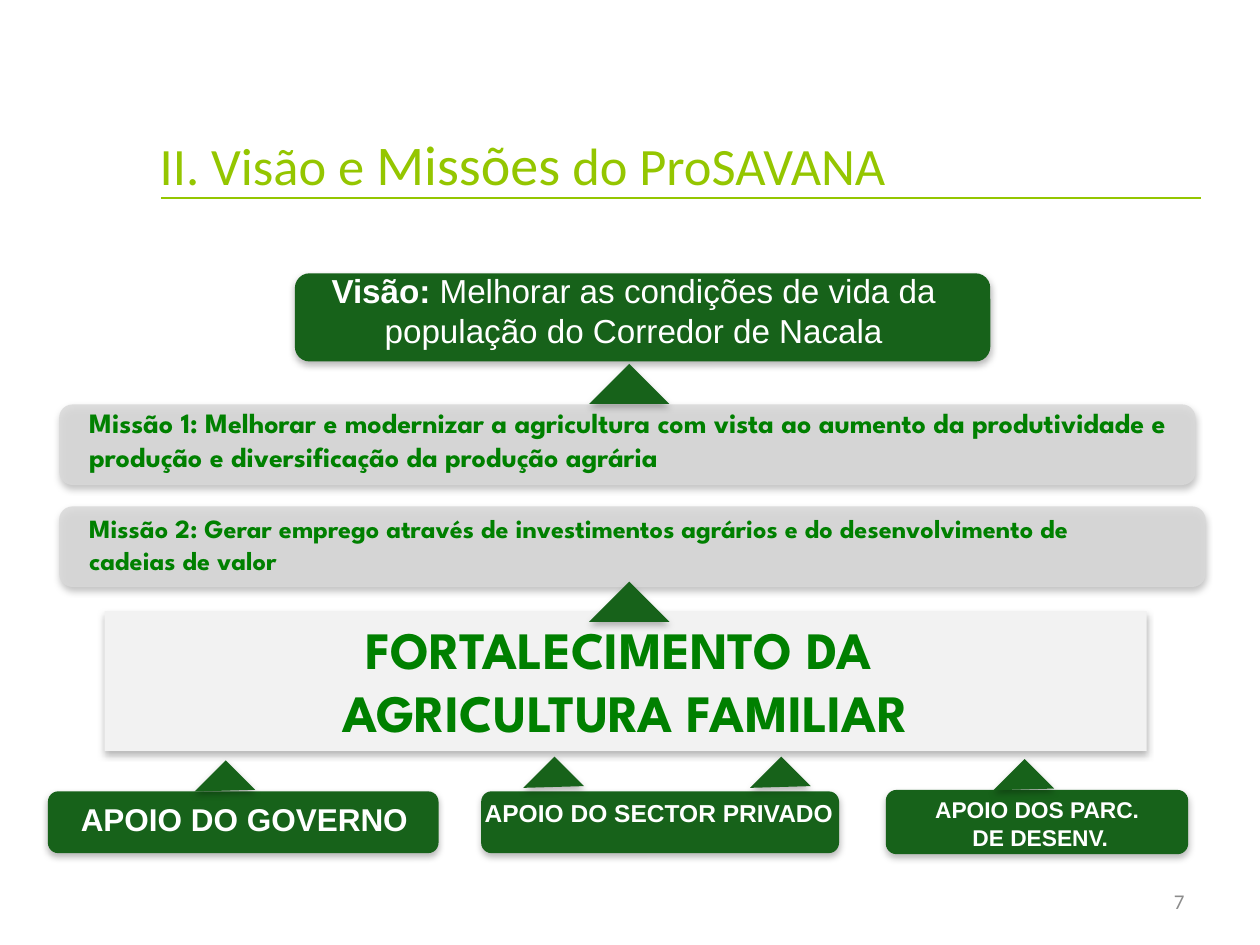
from dataclasses import dataclass

from lxml.etree import SubElement
from pptx import Presentation
from pptx.dml.color import RGBColor
from pptx.enum.shapes import MSO_CONNECTOR, MSO_SHAPE as Preset
from pptx.enum.text import MSO_ANCHOR as Anchor, PP_ALIGN as Align
from pptx.oxml import parse_xml
from pptx.oxml.ns import nsdecls, qn
from pptx.util import Pt


@dataclass(frozen=True)
class Theme:
    lime: str = "94C600"
    forest: str = "17621A"
    green: str = "008000"
    silver: str = "D9D9D9"
    pale: str = "F2F2F2"
    white: str = "FFFFFF"
    grey: str = "8C8C8C"
    title_font: str = "Calibri"
    body_font: str = "Arial"
    display_font: str = "League Spartan"
    title: int = 30
    title_accent: int = 32
    pillar: int = 30
    vision: int = 19
    mission_1: int = 16
    mission_2: int = 15
    government: int = 18
    private: int = 14
    partners: int = 13
    number: int = 12


THEME = Theme()

# Preset, (left, top, width, height), fill, opacity in percent
BOXES = [
    (Preset.ROUNDED_RECTANGLE, (168.5, 156.2, 397.4, 50.4), THEME.forest, 100),
    (Preset.ROUNDED_RECTANGLE, (33.8, 231.1, 649.4, 46.1), THEME.silver, 85),
    (Preset.ROUNDED_RECTANGLE, (33.8, 289.4, 655.2, 46.1), THEME.silver, 85),
    (Preset.RECTANGLE, (59.8, 349.2, 595.4, 79.9), THEME.pale, 100),
    (Preset.ROUNDED_RECTANGLE, (27.4, 452.2, 223.2, 35.3), THEME.forest, 100),
    (Preset.ROUNDED_RECTANGLE, (275, 452.2, 204.5, 35.3), THEME.forest, 100),
    (Preset.ROUNDED_RECTANGLE, (506.2, 451.4, 172.8, 36.7), THEME.forest, 100),
]

LARGE_ARROW = (32.4, 32.4)
SMALL_ARROW = (25.2, 23.8)
# Left, top, size before the turn that points the right angle upwards
ARROWS = [
    (343.4, 214.6, LARGE_ARROW),
    (343.4, 339.1, LARGE_ARROW),
    (115.9, 439.9, SMALL_ARROW),
    (303.8, 437.8, SMALL_ARROW),
    (433.4, 437.8, SMALL_ARROW),
    (572.4, 439.2, SMALL_ARROW),
]

# Frame, alignment, anchor, font, colour, paragraphs of (text, size, bold)
TEXTS = [
    ((84.2, 48.2, 553, 90), Align.LEFT, Anchor.MIDDLE, THEME.title_font, THEME.lime,
     [[("II. Visão e ", THEME.title, False),
       ("Missões", THEME.title_accent, False),
       (" do ProSAVANA", THEME.title, False)]]),
    ((163.4, 151.2, 397.4, 74.9), Align.CENTER, Anchor.TOP, THEME.body_font, THEME.white,
     [[("Visão:", THEME.vision, True),
       (" Melhorar as condições de vida da população do Corredor de Nacala",
        THEME.vision, False)]]),
    ((43.9, 228.2, 650.9, 46.1), Align.LEFT, Anchor.TOP, THEME.display_font, THEME.green,
     [[("Missão 1: Melhorar e modernizar a agricultura com vista ao aumento da "
        "produtividade e produção e diversificação da produção agrária",
        THEME.mission_1, True)]]),
    ((43.9, 289.4, 624.2, 43.9), Align.LEFT, Anchor.TOP, THEME.display_font, THEME.green,
     [[("Missão 2: Gerar emprego através de investimentos agrários e do "
        "desenvolvimento de cadeias de valor", THEME.mission_2, True)]]),
    ((59.8, 349.2, 595.4, 79.9), Align.CENTER, Anchor.TOP, THEME.display_font, THEME.green,
     [[("FORTALECIMENTO DA ", THEME.pillar, True)],
      [("AGRICULTURA FAMILIAR", THEME.pillar, True)]]),
    ((28.1, 453.6, 223.2, 51.1), Align.CENTER, Anchor.TOP, THEME.body_font, THEME.white,
     [[("APOIO DO GOVERNO", THEME.government, True)]]),
    ((267.1, 452.2, 218.9, 46.1), Align.CENTER, Anchor.TOP, THEME.body_font, THEME.white,
     [[("APOIO DO SECTOR PRIVADO", THEME.private, True)]]),
    ((482.4, 451.4, 223.9, 55.4), Align.CENTER, Anchor.TOP, THEME.body_font, THEME.white,
     [[("APOIO DOS PARC. ", THEME.partners, True)],
      [("DE DESENV.", THEME.partners, True)]]),
    ((516.2, 500.4, 167.8, 28.8), Align.RIGHT, Anchor.MIDDLE, THEME.title_font, THEME.grey,
     [[("7", THEME.number, False)]]),
]

SHADOW = (
    f'<a:effectLst {nsdecls("a")}>'
    f'<a:outerShdw blurRad="{Pt(4)}" dist="{Pt(2)}" dir="5400000" rotWithShape="0">'
    '<a:srgbClr val="000000"><a:alpha val="28000"/></a:srgbClr>'
    '</a:outerShdw></a:effectLst>'
)


def add_block(page, preset, frame, colour, opacity=100):
    """Add a borderless filled shape with the soft shadow shared by the diagram."""
    block = page.shapes.add_shape(preset, *map(Pt, frame))
    block.fill.solid()
    block.fill.fore_color.rgb = RGBColor.from_string(colour)
    block.line.fill.background()
    properties = block._element.spPr
    if opacity < 100:
        colour_node = properties.find(qn("a:solidFill")).find(qn("a:srgbClr"))
        SubElement(colour_node, qn("a:alpha")).set("val", str(opacity * 1000))
    properties.append(parse_xml(SHADOW))
    return block


def add_text(page, frame, align, anchor, font, colour, paragraphs):
    box = page.shapes.add_textbox(*map(Pt, frame))
    text = box.text_frame
    text.word_wrap = True
    text.vertical_anchor = anchor
    for index, runs in enumerate(paragraphs):
        para = text.add_paragraph() if index else text.paragraphs[0]
        para.alignment = align
        for words, size, bold in runs:
            span = para.add_run()
            span.text = words
            span.font.name = font
            span.font.size = Pt(size)
            span.font.bold = bold
            span.font.color.rgb = RGBColor.from_string(colour)


def add_title_rule(page):
    rule = page.shapes.add_connector(
        MSO_CONNECTOR.STRAIGHT, Pt(92.2), Pt(113), Pt(686.2), Pt(113))
    rule.line.color.rgb = RGBColor.from_string(THEME.lime)
    rule.line.width = Pt(1.25)
    SubElement(rule._element.spPr, qn("a:effectLst"))


def main():
    deck = Presentation()
    deck.slide_width, deck.slide_height = Pt(720), Pt(540)
    page = deck.slides.add_slide(deck.slide_layouts[6])
    add_title_rule(page)
    for box in BOXES:
        add_block(page, *box)
    for left, top, size in ARROWS:
        arrow = add_block(page, Preset.RIGHT_TRIANGLE, (left, top, *size), THEME.forest)
        arrow.rotation = 135
    for text in TEXTS:
        add_text(page, *text)
    deck.save("out.pptx")


if __name__ == "__main__":
    main()
